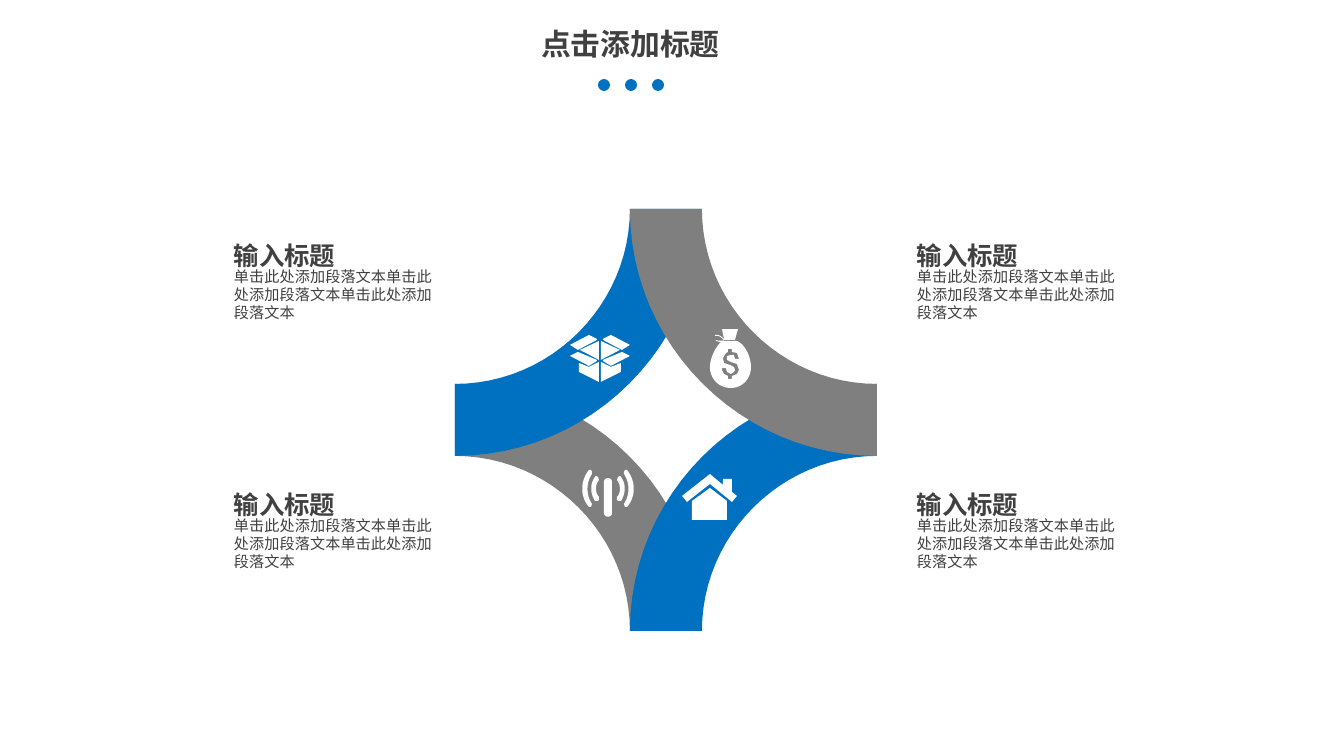
"""Build a slide with four interlocking ribbons, icons and captions."""
from dataclasses import dataclass
from itertools import product

from pptx import Presentation
from pptx.dml.color import RGBColor
from pptx.enum.shapes import MSO_SHAPE
from pptx.enum.text import PP_ALIGN
from pptx.util import Emu, Pt

OVAL = MSO_SHAPE.OVAL
LEFT, CENTER = PP_ALIGN.LEFT, PP_ALIGN.CENTER
EMU_PER_PX = 914400 / 134.4
CURVE_STEPS = 24
KAPPA = 0.55

Contour = tuple[tuple[int, ...], ...]
Point = tuple[float, float]


@dataclass(frozen=True)
class Theme:
    """Colours, fonts and type sizes."""
    blue: str = "0070C0"
    gray: str = "7F7F7F"
    white: str = "FFFFFF"
    ink: str = "404040"
    heading_font: str = "Calibri"
    text_font: str = "Noto Sans CJK SC"
    title_size: float = 16
    heading_size: float = 13.6
    body_size: float = 8.1


@dataclass(frozen=True)
class Ribbon:
    """A quarter ring centred on a corner of the emblem."""
    corner_x: int
    corner_y: int
    toward_x: int
    toward_y: int
    color: str


@dataclass(frozen=True)
class Label:
    """A line or block of text and its box."""
    text: str
    left: int
    top: int
    width: int
    height: int
    font: str
    size: float
    bold: bool = False
    wrap: bool = True
    inset_x: int = 21
    inset_y: int = 0
    align: PP_ALIGN = LEFT


THEME = Theme()
INNER, OUTER = 175, 247
RIBBONS = (
    Ribbon(455, 631, 1, -1, THEME.gray),
    Ribbon(455, 209, 1, 1, THEME.blue),
    Ribbon(877, 631, -1, -1, THEME.blue),
    Ribbon(877, 209, -1, 1, THEME.gray),
)

CARTON_HALF: tuple[Contour, ...] = (
    ((580, 350), (599, 341), (599, 360)),
    ((597, 360), (578, 352), (570, 356), (589, 366), (597, 361)),
    ((597, 339), (589, 335), (570, 345), (578, 350), (597, 340)),
    ((579, 363), (589, 367), (599, 362), (599, 382), (579, 372)),
)
MONEY_BAG: tuple[Contour, ...] = (
    ((737, 341), (723, 341), (724, 340), (735, 340), (738, 329), (722, 329),
     (724, 339), (722, 337, 719, 334, 715, 335), (715, 336),
     (719, 335, 722, 338, 724, 340), (722, 341, 719, 341, 716, 340),
     (716, 341), (720, 342), (722, 341), (715, 347, 710, 359, 710, 367),
     (710, 379, 719, 388, 731, 388), (742, 388, 751, 379, 751, 367),
     (751, 358, 746, 345, 737, 341)),
    ((737, 374), (732, 376), (732, 379), (728, 379), (728, 376), (724, 374),
     (722, 370), (722, 368), (726, 368), (727, 372), (731, 374), (734, 372),
     (735, 370), (734, 367), (730, 365), (724, 363), (723, 358), (726, 353),
     (728, 352), (728, 349), (732, 349), (732, 352), (737, 353), (739, 359),
     (735, 359), (734, 355), (731, 355), (727, 356), (727, 360), (731, 362),
     (737, 364), (739, 370)),
)
WAVES_HALF: tuple[Contour, ...] = (
    ((624, 504), (630, 495, 630, 483, 624, 474), (624, 472), (625, 470),
     (627, 470), (636, 481, 636, 497, 627, 507), (625, 507)),
    ((617, 497), (617, 500), (618, 501), (621, 501),
     (626, 493, 626, 484, 621, 477), (620, 476), (618, 477), (617, 480),
     (621, 485, 621, 493, 617, 497)),
)
MAST: Contour = ((604, 482), (604, 477, 612, 477, 612, 482), (612, 513),
                 (612, 518, 604, 518, 604, 513))
HOUSE: tuple[Contour, ...] = (
    ((692, 501), (692, 520), (727, 520), (727, 501), (710, 488)),
    ((732, 492), (732, 479), (723, 479), (723, 485), (710, 474), (682, 496),
     (687, 502), (710, 484), (732, 502), (737, 496)),
)


def px(length: float) -> Emu:
    """Turn px into EMU."""
    return Emu(round(length * EMU_PER_PX))


def mirrored(contours: tuple[Contour, ...], axis: int) -> tuple[Contour, ...]:
    """Reflect contours across a vertical axis."""
    return tuple(
        tuple(tuple(2 * axis - value if index % 2 == 0 else value
                    for index, value in enumerate(step)) for step in contour)
        for contour in contours)


def trace(contour: Contour) -> list[Point]:
    """Turn corners and cubic curves into points."""
    points: list[Point] = []
    for step in contour:
        if len(step) == 2:
            points.append((step[0], step[1]))
            continue
        controls = [points[-1], step[:2], step[2:4], step[4:]]
        for index in range(1, CURVE_STEPS + 1):
            t = index / CURVE_STEPS
            weights = ((1 - t) ** 3, 3 * t * (1 - t) ** 2, 3 * t * t * (1 - t), t ** 3)
            points.append((sum(w * c[0] for w, c in zip(weights, controls)),
                           sum(w * c[1] for w, c in zip(weights, controls))))
    return points


def paint(shape, color: str) -> None:
    """Give a shape a flat fill without line or shadow."""
    shape.shadow.inherit = False
    shape.fill.solid()
    shape.fill.fore_color.rgb = RGBColor.from_string(color)
    shape.line.fill.background()


def draw_outline(page, contours: tuple[Contour, ...], color: str) -> None:
    """Draw closed contours as one freeform."""
    outlines = [[(px(x), px(y)) for x, y in trace(contour)] for contour in contours]
    builder = page.shapes.build_freeform(*outlines[0][0])
    builder.add_line_segments(outlines[0][1:])
    for points in outlines[1:]:
        builder.move_to(*points[0])
        builder.add_line_segments(points[1:])
    paint(builder.convert_to_shape(), color)


def draw_ribbon(page, ribbon: Ribbon) -> None:
    """Draw a quarter ring."""
    def place(*offsets: float) -> tuple[int, ...]:
        """Place offsets from the ribbon's corner."""
        origin = (ribbon.corner_x, ribbon.corner_y)
        toward = (ribbon.toward_x, ribbon.toward_y)
        return tuple(round(origin[i % 2] + toward[i % 2] * offset)
                     for i, offset in enumerate(offsets))

    contour = (
        place(0, INNER), place(0, OUTER),
        place(KAPPA * OUTER, OUTER, OUTER, KAPPA * OUTER, OUTER, 0),
        place(INNER, 0),
        place(INNER, KAPPA * INNER, KAPPA * INNER, INNER, 0, INNER),
    )
    draw_outline(page, (contour,), ribbon.color)


def draw_label(page, label: Label) -> None:
    """Draw a text box."""
    box = page.shapes.add_textbox(
        px(label.left), px(label.top), px(label.width), px(label.height))
    frame = box.text_frame
    frame.word_wrap = label.wrap
    frame.margin_left = frame.margin_right = px(label.inset_x)
    frame.margin_top = frame.margin_bottom = px(label.inset_y)
    para = frame.paragraphs[0]
    para.text = label.text
    para.alignment = label.align
    para.font.name = label.font
    para.font.size = Pt(label.size)
    para.font.bold = label.bold
    para.font.color.rgb = RGBColor.from_string(THEME.ink)


def main() -> None:
    """Build and save the deck."""
    deck = Presentation()
    deck.slide_width, deck.slide_height = px(1344), px(756)
    page = deck.slides.add_slide(deck.slide_layouts[6])
    draw_label(page, Label("点击添加标题", 332, 19, 597, 50, THEME.text_font,
                           THEME.title_size, bold=True, inset_x=13, inset_y=7,
                           align=CENTER))
    for index in range(3):
        paint(page.shapes.add_shape(OVAL, px(598 + 27 * index), px(79), px(12), px(12)),
              THEME.blue)
    for ribbon in RIBBONS:
        draw_ribbon(page, ribbon)
    for icon in (CARTON_HALF + mirrored(CARTON_HALF, 600), MONEY_BAG,
                 WAVES_HALF + mirrored(WAVES_HALF, 608) + (MAST,), HOUSE):
        draw_outline(page, icon, THEME.white)
    for left, top in product((213, 896), (240, 489)):
        draw_label(page, Label("输入标题", left, top, 285, 27, THEME.heading_font,
                               THEME.heading_size, bold=True, wrap=False))
        draw_label(page, Label("单击此处添加段落文本" * 3, left, top + 27, 243, 59,
                               THEME.text_font, THEME.body_size))
    deck.save("out.pptx")


if __name__ == "__main__":
    main()
